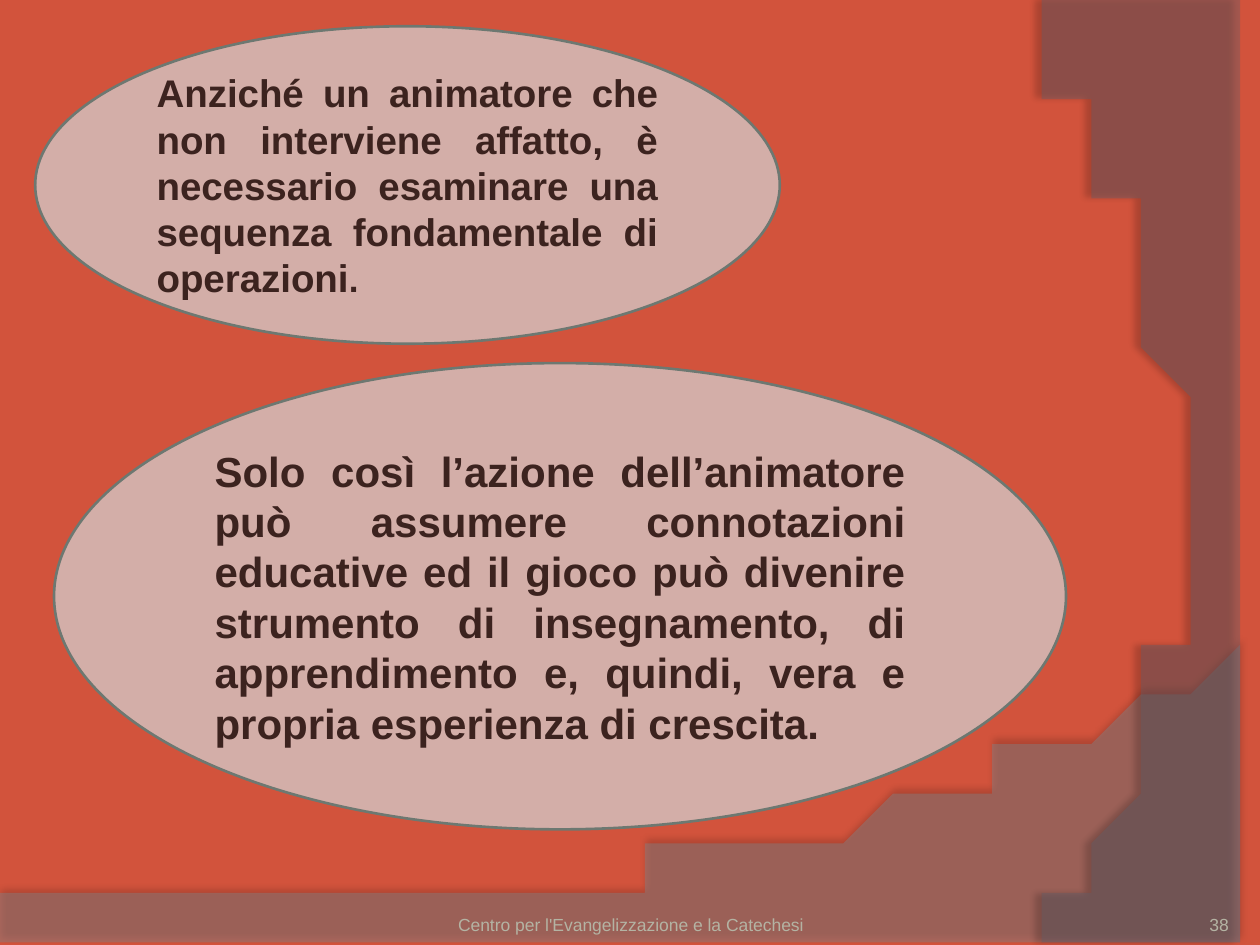
import pptx
import pptx.util
import pptx.dml.color
import pptx.enum.shapes
import pptx.enum.text
import pptx.oxml.ns
import lxml.etree

Cm = pptx.util.Cm
Pt = pptx.util.Pt
RGBColor = pptx.dml.color.RGBColor
ALIGN = pptx.enum.text.PP_ALIGN
ANCHOR = pptx.enum.text.MSO_ANCHOR
qn = pptx.oxml.ns.qn

ORANGE = RGBColor(0xD2, 0x53, 0x3C)
GREY = RGBColor(0x81, 0x81, 0x85)
SLATE = RGBColor(0x5E, 0x5E, 0x6B)
PINK = RGBColor(0xD3, 0xAE, 0xA8)
OUTLINE = RGBColor(0x6D, 0x78, 0x71)
BROWN = RGBColor(0x3C, 0x23, 0x1F)
SAND = RGBColor(0xB4, 0xB3, 0xA3)


def bezier(p0, p1, p2, p3, steps=60):
    points = []
    for i in range(1, steps + 1):
        t = i / steps
        weights = ((1 - t) ** 3, 3 * t * (1 - t) ** 2, 3 * t**2 * (1 - t), t**3)
        points.append(tuple(sum(w * q[axis] for w, q in zip(weights, (p0, p1, p2, p3))) for axis in (0, 1)))
    return points


def add_run(p, text, size, color, bold=False):
    r = p.add_run()
    r.text = text
    r.font.name = "Arial"
    r.font.size = Pt(size)
    r.font.bold = bold
    r.font.color.rgb = color


prs = pptx.Presentation()
prs.slide_width = Cm(25.4)
prs.slide_height = Cm(19.05)
s = prs.slides.add_slide(prs.slide_layouts[6])
s.background.fill.solid()
s.background.fill.fore_color.rgb = ORANGE

wave = [(0, 17.91), (0, 19.08), (25.4, 19.08), (25.4, 13.21)]
wave += bezier(wave[-1], (14.2, 18.52), (9.93, 18.26), (0, 17.91))
side = [(25.4, 0.05), (25.4, 19.05), (20.85, 19.05)]
side += bezier(side[-1], (23.75, 15.72), (25.86, 7.62), (20.32, 0))

for points, color, opacity, shadow_opacity, distance, angle in [
    (wave, GREY, 45, 35, 3.5, 270),
    (side, SLATE, 40, 45, 4, 180),
]:
    builder = s.shapes.build_freeform(*points[0], scale=Cm(1))
    builder.add_line_segments(points[1:], close=True)
    sp = builder.convert_to_shape()
    sp.fill.solid()
    sp.fill.fore_color.rgb = color
    sp.line.fill.background()
    sp.shadow.inherit = False
    spPr = sp._element.spPr
    fill_color = spPr.find(qn("a:solidFill")).find(qn("a:srgbClr"))
    lxml.etree.SubElement(fill_color, qn("a:alpha"), val=str(opacity * 1000))
    shadow = lxml.etree.SubElement(
        spPr.find(qn("a:effectLst")), qn("a:outerShdw"),
        blurRad=str(Pt(4)), dist=str(Pt(distance)), dir=str(angle * 60000),
        algn="ctr", rotWithShape="0",
    )
    black = lxml.etree.SubElement(shadow, qn("a:srgbClr"), val="000000")
    lxml.etree.SubElement(black, qn("a:alpha"), val=str(shadow_opacity * 1000))

for left, width, top_inset, align, text in [
    (8.69, 8.05, 0.13, ALIGN.CENTER, "Centro per l'Evangelizzazione e la Catechesi"),
    (22.66, 2.11, 0, ALIGN.RIGHT, "38"),
]:
    sp = s.shapes.add_textbox(Cm(left), Cm(17.83), Cm(width), Cm(1.02))
    tf = sp.text_frame
    tf.word_wrap = True
    tf.vertical_anchor = ANCHOR.BOTTOM
    tf.margin_left = tf.margin_right = tf.margin_bottom = 0
    tf.margin_top = Cm(top_inset)
    p = tf.paragraphs[0]
    p.alignment = align
    add_run(p, text, 10, SAND)

for left, top, width, height, runs in [
    (0.71, 0.53, 15.01, 6.4, [
        ("Anziché un animatore che non interviene affatto, è necessario esaminare "
         "una sequenza fondamentale di operazioni", 22),
        (".", 20),
    ]),
    (1.09, 7.32, 20.4, 9.4, [
        ("Solo così l’azione dell’animatore può assumere connotazioni educative ed il gioco "
         "può divenire strumento di insegnamento, di apprendimento e, quindi, vera e propria "
         "esperienza di crescita.", 24),
    ]),
]:
    sp = s.shapes.add_shape(
        pptx.enum.shapes.MSO_SHAPE.OVAL, Cm(left), Cm(top), Cm(width), Cm(height)
    )
    sp.shadow.inherit = False
    sp.fill.solid()
    sp.fill.fore_color.rgb = PINK
    sp.line.color.rgb = OUTLINE
    sp.line.width = Pt(1.5)
    tf = sp.text_frame
    tf.word_wrap = True
    tf.vertical_anchor = ANCHOR.MIDDLE
    p = tf.paragraphs[0]
    p.alignment = ALIGN.JUSTIFY
    for text, size in runs:
        add_run(p, text, size, BROWN, bold=True)

prs.save("out.pptx")
